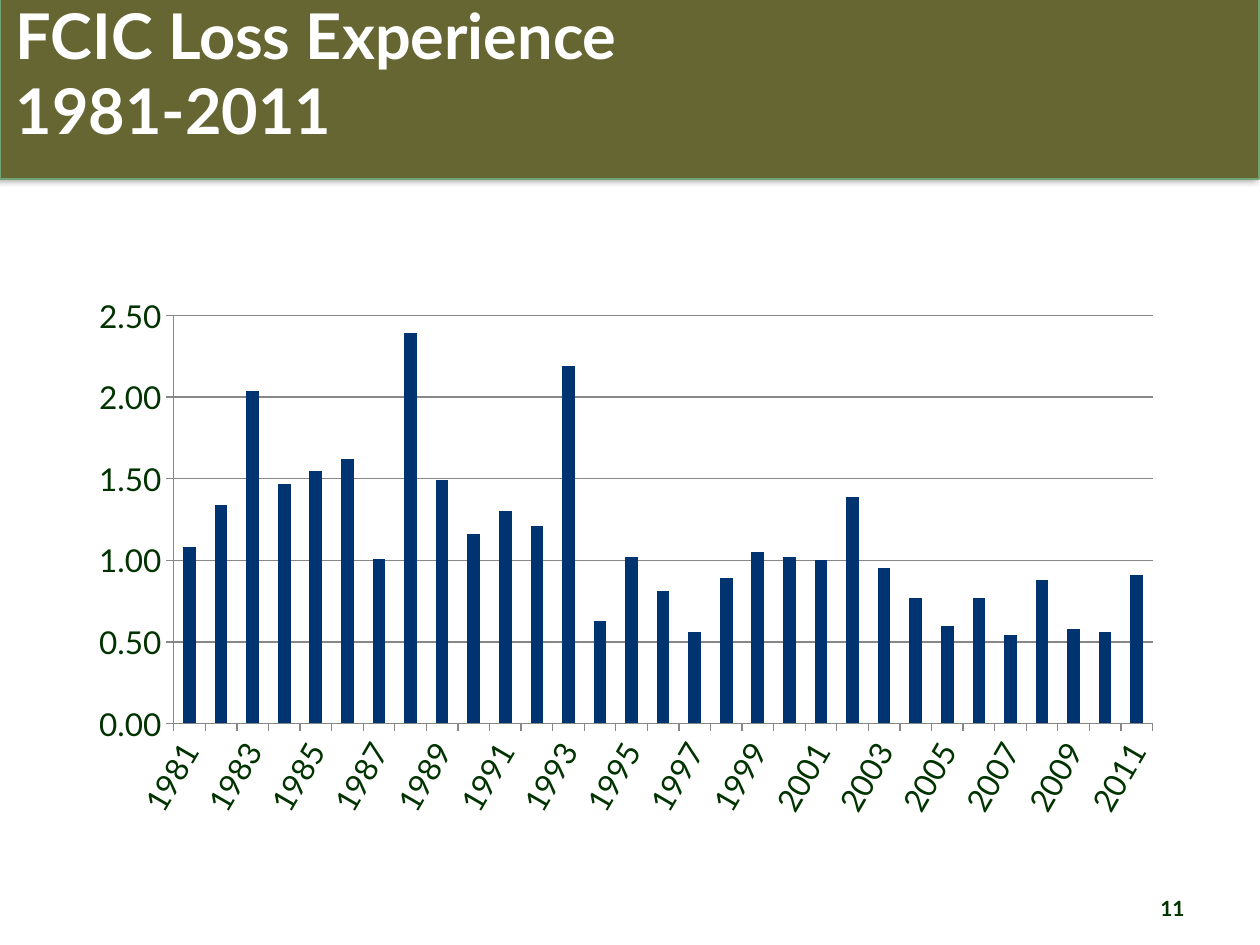
import pptx
import pptx.chart.data
import pptx.dml.color
import pptx.enum.chart
import pptx.enum.shapes
import pptx.enum.text
import pptx.oxml
import pptx.util

PX = 914400 // 126
FONT = "Lato"
COLORS = {
    "band": "666633",
    "band_line": "72A376",
    "title": "FFFFFF",
    "text": "003300",
    "bar": "003470",
    "axis": "878787",
}
FIRST_YEAR = 1981
LOSS_RATIOS = [
    1.08, 1.34, 2.04, 1.47, 1.55, 1.62, 1.01, 2.39, 1.49, 1.16, 1.3,
    1.21, 2.19, 0.63, 1.02, 0.81, 0.56, 0.89, 1.05, 1.02, 1, 1.39,
    0.95, 0.77, 0.6, 0.77, 0.54, 0.88, 0.58, 0.56, 0.91,
]
A_NS = 'xmlns:a="http://schemas.openxmlformats.org/drawingml/2006/main"'
C_NS = 'xmlns:c="http://schemas.openxmlformats.org/drawingml/2006/chart"'
BAND_SHADOW = f"""<a:effectLst {A_NS}>
  <a:outerShdw blurRad="50800" dist="38100" dir="10800000" algn="r" rotWithShape="0">
    <a:srgbClr val="000000"><a:alpha val="40000"/></a:srgbClr>
  </a:outerShdw>
</a:effectLst>"""
PLOT_LAYOUT = f"""<c:layout {C_NS}><c:manualLayout>
  <c:layoutTarget val="inner"/><c:xMode val="edge"/><c:yMode val="edge"/>
  <c:x val="0.107"/><c:y val="0.136"/><c:w val="0.867"/><c:h val="0.656"/>
</c:manualLayout></c:layout>"""


def px(*lengths):
    return [pptx.util.Emu(n * PX) for n in lengths]


def rgb(name):
    return pptx.dml.color.RGBColor.from_string(COLORS[name])


def set_font(font, size, color, bold=False):
    font.name = FONT
    font.size = pptx.util.Pt(size)
    font.bold = bold
    font.color.rgb = rgb(color)


def add_band(s):
    sp = s.shapes.add_shape(pptx.enum.shapes.MSO_SHAPE.RECTANGLE, *px(0, -10, 1259, 189))
    sp.fill.solid()
    sp.fill.fore_color.rgb = rgb("band")
    sp.line.color.rgb = rgb("band_line")
    sp.line.width = pptx.util.Pt(0.75)
    sp._element.spPr.append(pptx.oxml.parse_xml(BAND_SHADOW))
    s.shapes._spTree.insert(2, sp._element)  # behind the title


def set_title(s, text):
    sp = s.shapes.title
    sp.left, sp.top, sp.width, sp.height = px(3, -10, 766, 195)
    tf = sp.text_frame
    tf.text = text
    tf.word_wrap = True
    tf.auto_size = pptx.enum.text.MSO_AUTO_SIZE.NONE
    tf.vertical_anchor = pptx.enum.text.MSO_ANCHOR.TOP
    p = tf.paragraphs[0]
    p.alignment = pptx.enum.text.PP_ALIGN.LEFT
    set_font(p.font, 36, "title", bold=True)


def add_page_number(s, text):
    tf = s.shapes.add_textbox(*px(903, 891, 294, 34)).text_frame
    tf.word_wrap = True
    tf.vertical_anchor = pptx.enum.text.MSO_ANCHOR.MIDDLE
    p = tf.paragraphs[0]
    p.text = text
    p.alignment = pptx.enum.text.PP_ALIGN.RIGHT
    set_font(p.font, 12, "text", bold=True)


def format_axis(axis):
    axis.major_tick_mark = pptx.enum.chart.XL_TICK_MARK.OUTSIDE
    axis.minor_tick_mark = pptx.enum.chart.XL_TICK_MARK.NONE
    axis.format.line.color.rgb = rgb("axis")
    set_font(axis.tick_labels.font, 18, "text")


def add_loss_chart(s):
    data = pptx.chart.data.CategoryChartData(number_format="0.00")
    data.categories = [str(FIRST_YEAR + i) for i in range(len(LOSS_RATIOS))]
    data.add_series("Series 1", LOSS_RATIOS)
    chart = s.shapes.add_chart(
        pptx.enum.chart.XL_CHART_TYPE.COLUMN_CLUSTERED, *px(53, 231, 1129, 622), data
    ).chart
    chart.has_legend = False
    chart.has_title = False
    set_font(chart.font, 18, "text")

    plot = chart.plots[0]
    plot.gap_width = 150
    plot.vary_by_categories = False
    fill = plot.series[0].format.fill
    fill.solid()
    fill.fore_color.rgb = rgb("bar")

    years, ratios = chart.category_axis, chart.value_axis
    format_axis(years)
    format_axis(ratios)
    years._element.txPr.bodyPr.set("rot", "-3600000")
    ratios.minimum_scale, ratios.maximum_scale, ratios.major_unit = 0, 2.5, 0.5
    ratios.tick_labels.number_format = "0.00"
    ratios.tick_labels.number_format_is_linked = False
    ratios.major_gridlines.format.line.color.rgb = rgb("axis")

    plot_area = chart._chartSpace.chart.plotArea
    for layout in plot_area.xpath("c:layout"):
        plot_area.remove(layout)
    plot_area.insert(0, pptx.oxml.parse_xml(PLOT_LAYOUT))


def main():
    prs = pptx.Presentation()
    prs.slide_width, prs.slide_height = px(1260, 945)
    s = prs.slides.add_slide(prs.slide_layouts.get_by_name("Title Only"))
    add_band(s)
    set_title(s, "FCIC Loss Experience 1981-2011")
    add_loss_chart(s)
    add_page_number(s, "11")
    prs.save("out.pptx")


if __name__ == "__main__":
    main()
